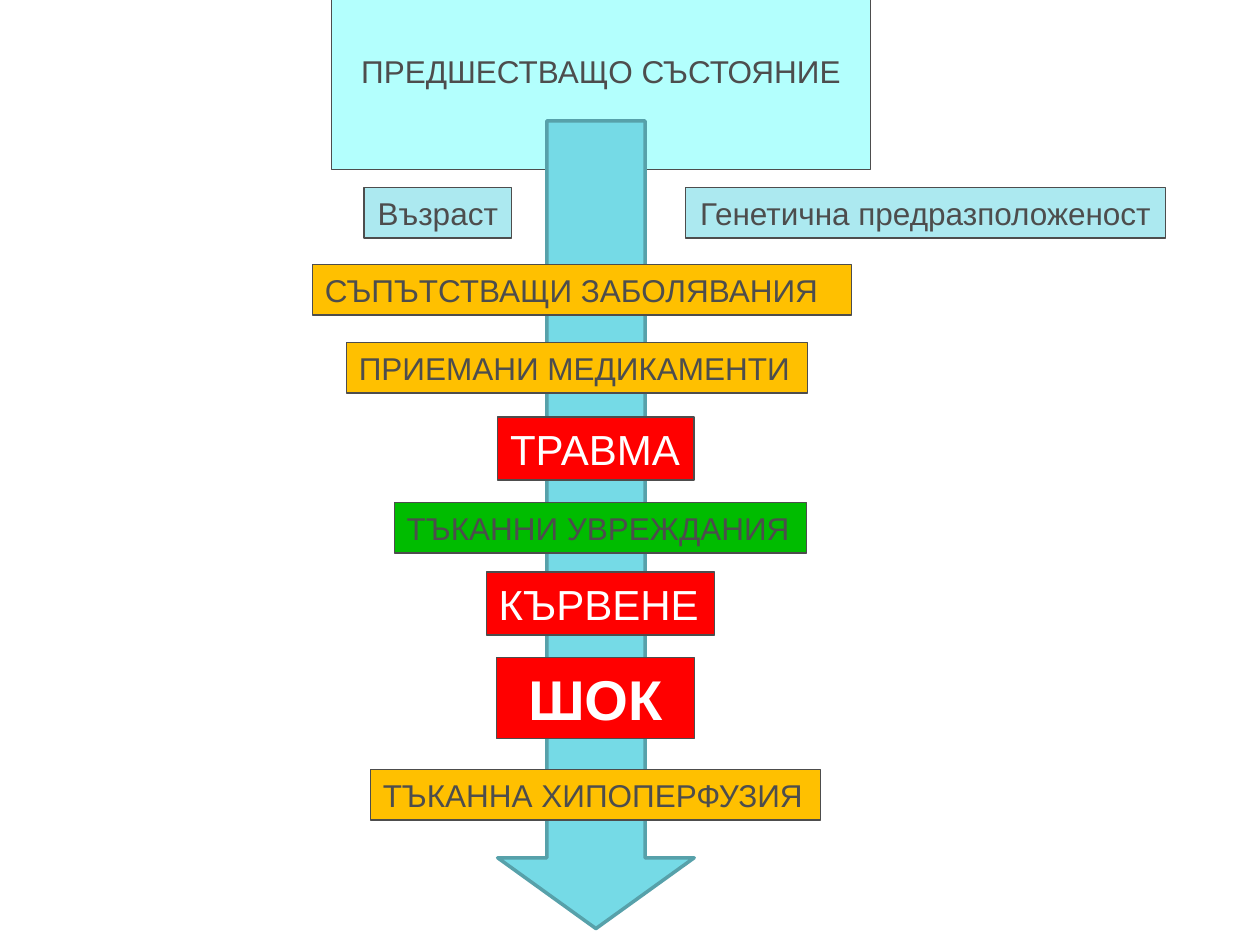
from pptx import Presentation
from pptx.dml.color import RGBColor
from pptx.enum.shapes import MSO_SHAPE
from pptx.enum.text import MSO_ANCHOR, MSO_AUTO_SIZE, PP_ALIGN
from pptx.util import Inches, Pt

DOWN_ARROW = MSO_SHAPE.DOWN_ARROW
RECTANGLE = MSO_SHAPE.RECTANGLE
MIDDLE = MSO_ANCHOR.MIDDLE
FIT_SHAPE = MSO_AUTO_SIZE.SHAPE_TO_FIT_TEXT
LEFT = PP_ALIGN.LEFT
CENTER = PP_ALIGN.CENTER

TURQUOISE = RGBColor(0x75, 0xDA, 0xE6)
TEAL = RGBColor(0x57, 0xA1, 0xAA)
ICE = RGBColor(0xB3, 0xFF, 0xFD)
PALE_BLUE = RGBColor(0xAC, 0xE9, 0xF0)
AMBER = RGBColor(0xFF, 0xC0, 0x00)
RED = RGBColor(0xFF, 0x00, 0x00)
GREEN = RGBColor(0x00, 0xBC, 0x00)
GRAY = RGBColor(0x4D, 0x4D, 0x4D)
WHITE = RGBColor(0xFF, 0xFF, 0xFF)

BOX_HEIGHTS = {18: 0.4, 24: 0.5, 32: 0.64}

FACTORS = [
    ("Възраст", 2.89, 1.49, 1.17, PALE_BLUE, 18, CENTER, False),
    ("Генетична предразположеност", 5.44, 1.49, 3.81, PALE_BLUE, 18, CENTER, False),
    ("СЪПЪТСТВАЩИ ЗАБОЛЯВАНИЯ", 2.48, 2.1, 4.28, AMBER, 18, LEFT, True),
    ("ПРИЕМАНИ МЕДИКАМЕНТИ", 2.75, 2.72, 3.66, AMBER, 18, LEFT, False),
]
CONSEQUENCES = [
    ("ТРАВМА", 3.95, 3.31, 1.56, RED, 24, LEFT, False),
    ("ТЪКАННИ УВРЕЖДАНИЯ", 3.13, 3.99, 3.27, GREEN, 18, LEFT, False),
    ("КЪРВЕНЕ", 3.86, 4.54, 1.81, RED, 24, LEFT, False),
    ("ШОК", 3.94, 5.22, 1.57, RED, 32, CENTER, True),
    ("ТЪКАННА ХИПОПЕРФУЗИЯ", 2.94, 6.11, 3.57, AMBER, 18, LEFT, False),
]


def style_box(shape, text, fill, size, alignment, wrap):
    """Fill and outline a box and set its single line of text."""
    shape.fill.solid()
    shape.fill.fore_color.rgb = fill
    shape.line.color.rgb = GRAY
    shape.line.width = Pt(0.75)
    text_frame = shape.text_frame
    text_frame.text = text
    text_frame.word_wrap = wrap
    text_frame.auto_size = FIT_SHAPE
    text_frame.vertical_anchor = MIDDLE
    paragraph = text_frame.paragraphs[0]
    paragraph.alignment = alignment
    font = paragraph.runs[0].font
    font.name = "Arial"
    font.size = Pt(size)
    font.bold = size == 32
    font.color.rgb = WHITE if fill == RED else GRAY


def add_title(slide, left, top, width, height):
    """Place the title box above the arrow."""
    title = slide.shapes.title
    title.left, title.top = Inches(left), Inches(top)
    title.width, title.height = Inches(width), Inches(height)
    style_box(title, "ПРЕДШЕСТВАЩО СЪСТОЯНИЕ", ICE, 18, CENTER, True)


def add_arrow(slide, left, top, width, height):
    """Draw the downward arrow behind the stages."""
    arrow = slide.shapes.add_shape(
        DOWN_ARROW, Inches(left), Inches(top), Inches(width), Inches(height)
    )
    arrow.adjustments[0] = 0.5
    arrow.adjustments[1] = 0.36
    arrow.shadow.inherit = False
    arrow.fill.solid()
    arrow.fill.fore_color.rgb = TURQUOISE
    arrow.line.color.rgb = TEAL
    arrow.line.width = Pt(2)


def add_stages(slide, stages):
    """Add the labelled boxes along the arrow."""
    for text, left, top, width, fill, size, alignment, wrap in stages:
        box = slide.shapes.add_shape(
            RECTANGLE, Inches(left), Inches(top), Inches(width), Inches(BOX_HEIGHTS[size])
        )
        box.shadow.inherit = False
        style_box(box, text, fill, size, alignment, wrap)


def main():
    """Build and save the presentation."""
    presentation = Presentation()
    presentation.slide_width = Inches(10)
    presentation.slide_height = Inches(7.5)
    slide = presentation.slides.add_slide(presentation.slide_layouts[5])
    add_title(slide, 2.63, 0.36, 4.28, 0.4)
    add_arrow(slide, 3.95, 0.96, 1.56, 6.41)
    add_stages(slide, FACTORS)
    add_stages(slide, CONSEQUENCES)
    presentation.save("out.pptx")


if __name__ == "__main__":
    main()
